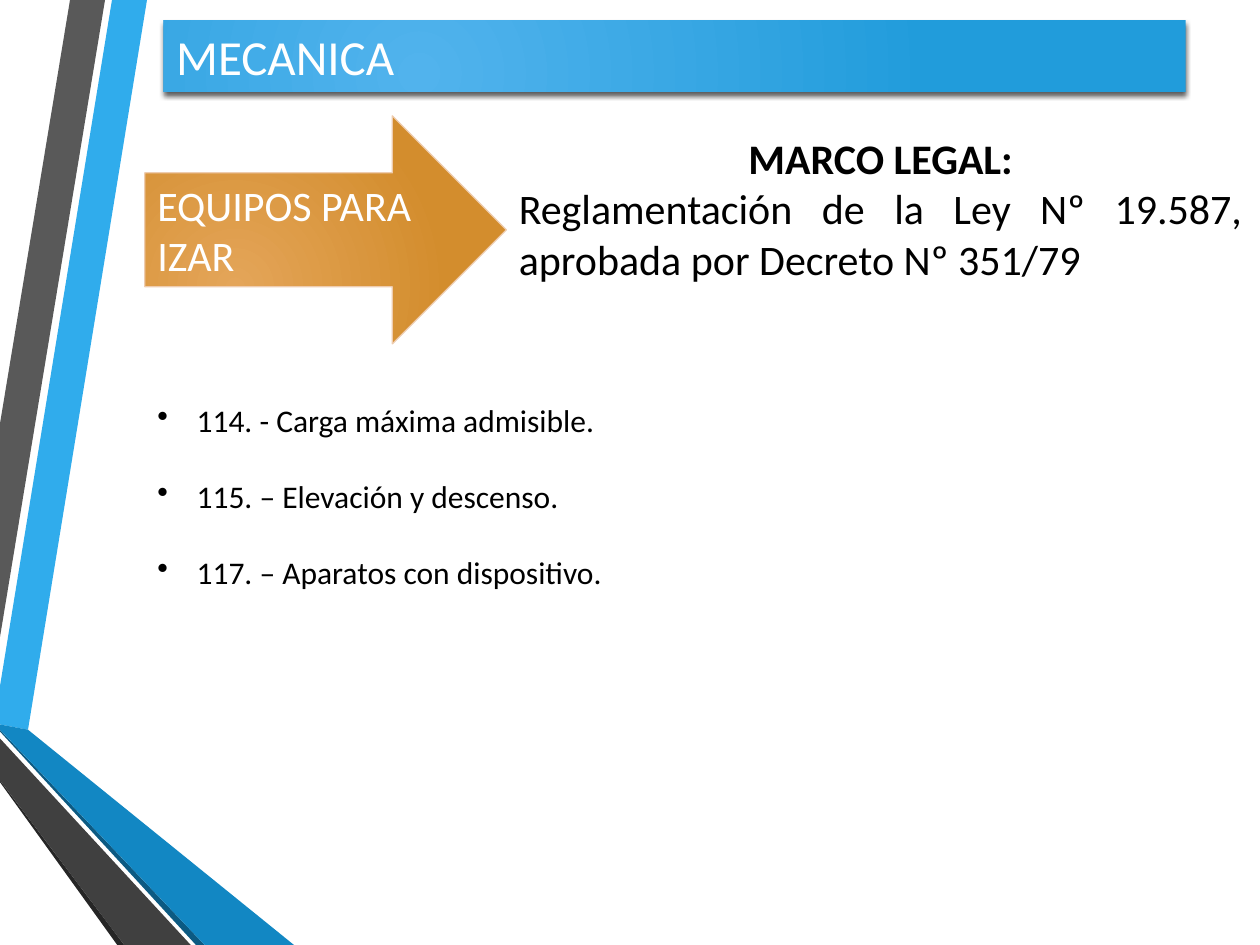
import pptx
import pptx.util
import pptx.dml.color
import pptx.enum.shapes
import pptx.enum.text
import pptx.oxml
import pptx.oxml.ns

Pt = pptx.util.Pt
ALIGN = pptx.enum.text.PP_ALIGN
SHAPES = pptx.enum.shapes.MSO_SHAPE
qn = pptx.oxml.ns.qn

FONT = "Calibri"
COLORS = {
    "sky": "30ACEC", "grey": "595959", "black": "000000", "white": "FFFFFF",
    "dark": "262626", "navy": "0C5A82", "blue": "1287C3", "charcoal": "404040",
    "bar_light": "51B3ED", "bar_deep": "219CDB",
    "arrow_light": "E4A559", "arrow_deep": "D38D2D", "arrow_edge": "EECCAF",
}

# Ribbons down the left edge: colour, then corner points
RIBBONS = [
    ("sky", [(0, 391.7), (0, 414), (15.8, 416.9), (84.2, 0), (64.1, 0)]),
    ("grey", [(59.8, 0), (39.6, 0), (0, 241.9), (0, 364.3)]),
    ("dark", [(0, 445.7), (0, 447.1), (67, 540), (71.3, 540)]),
    ("navy", [(0, 416.9), (0, 417.6), (112.3, 540), (117.4, 540)]),
    ("blue", [(0, 416.9), (117.4, 540), (167.8, 540), (15.8, 416.9), (0, 414)]),
    ("charcoal", [(0, 445.7), (71.3, 540), (108.7, 540), (0, 421.9)]),
]
TITLE = "MECANICA"
TOPIC = "EQUIPOS PARA IZAR"
LEGAL_HEADING = "MARCO LEGAL:"
LEGAL_TEXT = "Reglamentación de la Ley Nº 19.587, aprobada por Decreto Nº 351/79"
ARTICLES = [
    "114. - Carga máxima admisible.",
    "115. – Elevación y descenso.",
    "117. – Aparatos con dispositivo.",
]
ARTICLE_INDENT = 22.5
ARTICLE_GAP = 22

TITLE_BOX = (93.6, 11.5, 583.9, 41)
TOPIC_BOX = (82.8, 66.2, 206.6, 130.3)
LEGAL_BOX = (289.4, 72, 427.7, 94.3)
ARTICLE_BOX = (82.8, 225.4, 612, 116.6)

GLOW_CENTRE = """<a:path %s path="circle">
<a:fillToRect l="50000" t="100000" r="100000" b="50000"/></a:path>""" % pptx.oxml.ns.nsdecls("a")
DROP_SHADOW = """<a:effectLst %s>
<a:outerShdw blurRad="38100" dist="25400" dir="5400000" rotWithShape="0">
<a:srgbClr val="%s"><a:alpha val="64000"/></a:srgbClr></a:outerShdw>
</a:effectLst>""" % (pptx.oxml.ns.nsdecls("a"), COLORS["black"])


def rgb(name):
    return pptx.dml.color.RGBColor.from_string(COLORS[name])


def add_ribbon(page, color, points):
    builder = page.shapes.build_freeform(*points[0], scale=Pt(1))
    builder.add_line_segments(points[1:], close=True)
    ribbon = builder.convert_to_shape()
    ribbon.shadow.inherit = False
    ribbon.fill.solid()
    ribbon.fill.fore_color.rgb = rgb(color)
    ribbon.line.fill.background()


def write(frame, lines, size, color):
    """Fill a text frame with (text, alignment, bold) lines."""
    frame.word_wrap = True
    for number, (text, align, bold) in enumerate(lines):
        para = frame.add_paragraph() if number else frame.paragraphs[0]
        para.text = text
        para.alignment = align
        para.font.name = FONT
        para.font.size = Pt(size)
        para.font.bold = bold
        para.font.color.rgb = rgb(color)


def add_glowing_shape(page, kind, box, colors, text, size):
    """Add a labelled shape with a circular two-colour gradient."""
    shape = page.shapes.add_shape(kind, *map(Pt, box))
    shape.shadow.inherit = False
    shape.line.fill.background()
    shape.fill.gradient()
    for stop, color, position in zip(shape.fill.gradient_stops, colors, (0, 1)):
        stop.color.rgb = rgb(color)
        stop.position = position
    gradient = shape._element.spPr.find(qn("a:gradFill"))
    gradient.replace(gradient.find(qn("a:lin")), pptx.oxml.parse_xml(GLOW_CENTRE))
    shape.text_frame.vertical_anchor = pptx.enum.text.MSO_ANCHOR.MIDDLE
    write(shape.text_frame, [(text, ALIGN.LEFT, False)], size, "white")
    return shape


def add_text(page, box, lines, size):
    frame = page.shapes.add_textbox(*map(Pt, box)).text_frame
    write(frame, lines, size, "black")
    return frame


def add_bullet(para):
    properties = para._p.get_or_add_pPr()
    properties.set("marL", str(Pt(ARTICLE_INDENT)))
    properties.set("indent", str(-Pt(ARTICLE_INDENT)))
    bullet = pptx.oxml.parse_xml('<a:buChar %s char="•"/>' % pptx.oxml.ns.nsdecls("a"))
    properties.find(qn("a:defRPr")).addprevious(bullet)


def main():
    deck = pptx.Presentation()
    deck.slide_width, deck.slide_height = Pt(720), Pt(540)
    page = deck.slides.add_slide(deck.slide_layouts[6])

    for color, points in RIBBONS:
        add_ribbon(page, color, points)

    arrow = add_glowing_shape(page, SHAPES.RIGHT_ARROW, TOPIC_BOX,
                              ("arrow_light", "arrow_deep"), TOPIC, 24)
    arrow.line.color.rgb = rgb("arrow_edge")
    arrow.line.width = Pt(0.75)

    bar = add_glowing_shape(page, SHAPES.RECTANGLE, TITLE_BOX,
                            ("bar_light", "bar_deep"), TITLE, 28)
    properties = bar._element.spPr
    properties.replace(properties.find(qn("a:effectLst")), pptx.oxml.parse_xml(DROP_SHADOW))

    add_text(page, LEGAL_BOX, [(LEGAL_HEADING, ALIGN.CENTER, True),
                               (LEGAL_TEXT, ALIGN.JUSTIFY, False)], 24)

    articles = add_text(page, ARTICLE_BOX,
                        [(text, ALIGN.LEFT, False) for text in ARTICLES], 18)
    for number, para in enumerate(articles.paragraphs):
        para.space_before = Pt(ARTICLE_GAP if number else 0)
        add_bullet(para)

    deck.save("out.pptx")


if __name__ == "__main__":
    main()
